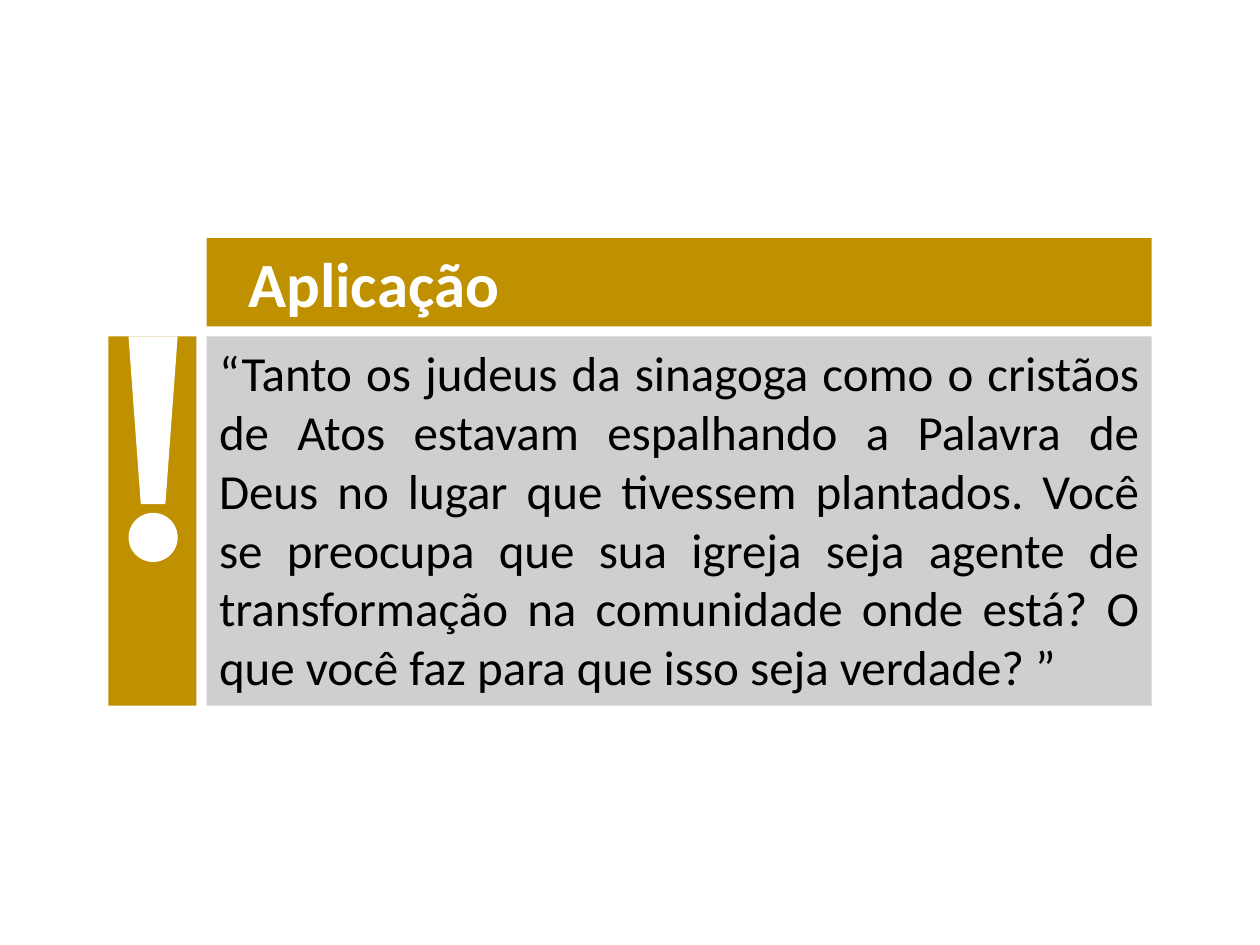
from dataclasses import dataclass

from pptx import Presentation
from pptx.dml.color import RGBColor
from pptx.enum.shapes import MSO_SHAPE
from pptx.enum.text import MSO_ANCHOR, MSO_AUTO_SIZE, PP_ALIGN
from pptx.util import Inches, Pt


@dataclass(frozen=True)
class Theme:
    font: str = "Calibri"
    gold: RGBColor = RGBColor(0xBF, 0x90, 0x00)
    gray: RGBColor = RGBColor(0xD0, 0xCE, 0xCE)
    white: RGBColor = RGBColor(0xFF, 0xFF, 0xFF)
    black: RGBColor = RGBColor(0, 0, 0)
    title_size: Pt = Pt(36)
    body_size: Pt = Pt(28)


@dataclass(frozen=True)
class Box:
    left: float
    top: float
    width: float
    height: float


THEME = Theme()
HEADER = Box(1.64, 1.89, 7.5, 0.7)
TITLE = Box(1.87, 1.89, 6.02, 0.71)
PANEL = Box(1.64, 2.67, 7.5, 2.93)
SIDEBAR = Box(0.86, 2.67, 0.7, 2.93)
MARK_DOT = Box(1.02, 4.07, 0.39, 0.39)
MARK_STROKE = Box(1.02, 2.67, 0.39, 1.33)

QUESTION = (
    "“Tanto os judeus da sinagoga como o cristãos de Atos estavam espalhando "
    "a Palavra de Deus no lugar que tivessem plantados. Você se preocupa que "
    "sua igreja seja agente de transformação na comunidade onde está? O que "
    "você faz para que isso seja verdade? ”"
)


def place(sp, box: Box) -> None:
    sp.left, sp.top = Inches(box.left), Inches(box.top)
    sp.width, sp.height = Inches(box.width), Inches(box.height)


def add_block(slide, kind: MSO_SHAPE, box: Box, color: RGBColor):
    """Add a flat shape with no outline or shadow."""
    sp = slide.shapes.add_shape(kind, 0, 0, 0, 0)
    place(sp, box)
    sp.shadow.inherit = False
    sp.fill.solid()
    sp.fill.fore_color.rgb = color
    sp.line.fill.background()
    return sp


def write(sp, text: str, size: Pt, color: RGBColor, align: PP_ALIGN,
          anchor: MSO_ANCHOR, bold: bool = False) -> None:
    tf = sp.text_frame
    tf.text = text
    tf.word_wrap = True
    tf.auto_size = MSO_AUTO_SIZE.NONE
    tf.vertical_anchor = anchor
    p = tf.paragraphs[0]
    p.alignment = align
    font = p.runs[0].font
    font.name, font.size, font.bold = THEME.font, size, bold
    font.color.rgb = color


def main() -> None:
    prs = Presentation()
    prs.slide_width, prs.slide_height = Inches(10), Inches(7.5)
    slide = prs.slides.add_slide(prs.slide_layouts[5])

    header = add_block(slide, MSO_SHAPE.RECTANGLE, HEADER, THEME.gold)
    title = slide.shapes.title
    place(title, TITLE)
    write(title, "Aplicação", THEME.title_size, THEME.white,
          PP_ALIGN.LEFT, MSO_ANCHOR.TOP, bold=True)
    header.element.addnext(title.element)  # title in front of its bar

    panel = add_block(slide, MSO_SHAPE.RECTANGLE, PANEL, THEME.gray)
    write(panel, QUESTION, THEME.body_size, THEME.black,
          PP_ALIGN.JUSTIFY, MSO_ANCHOR.TOP)

    add_block(slide, MSO_SHAPE.RECTANGLE, SIDEBAR, THEME.gold)
    add_block(slide, MSO_SHAPE.OVAL, MARK_DOT, THEME.white)
    stroke = add_block(slide, MSO_SHAPE.TRAPEZOID, MARK_STROKE, THEME.white)
    stroke.rotation = 180

    prs.save("out.pptx")


if __name__ == "__main__":
    main()
